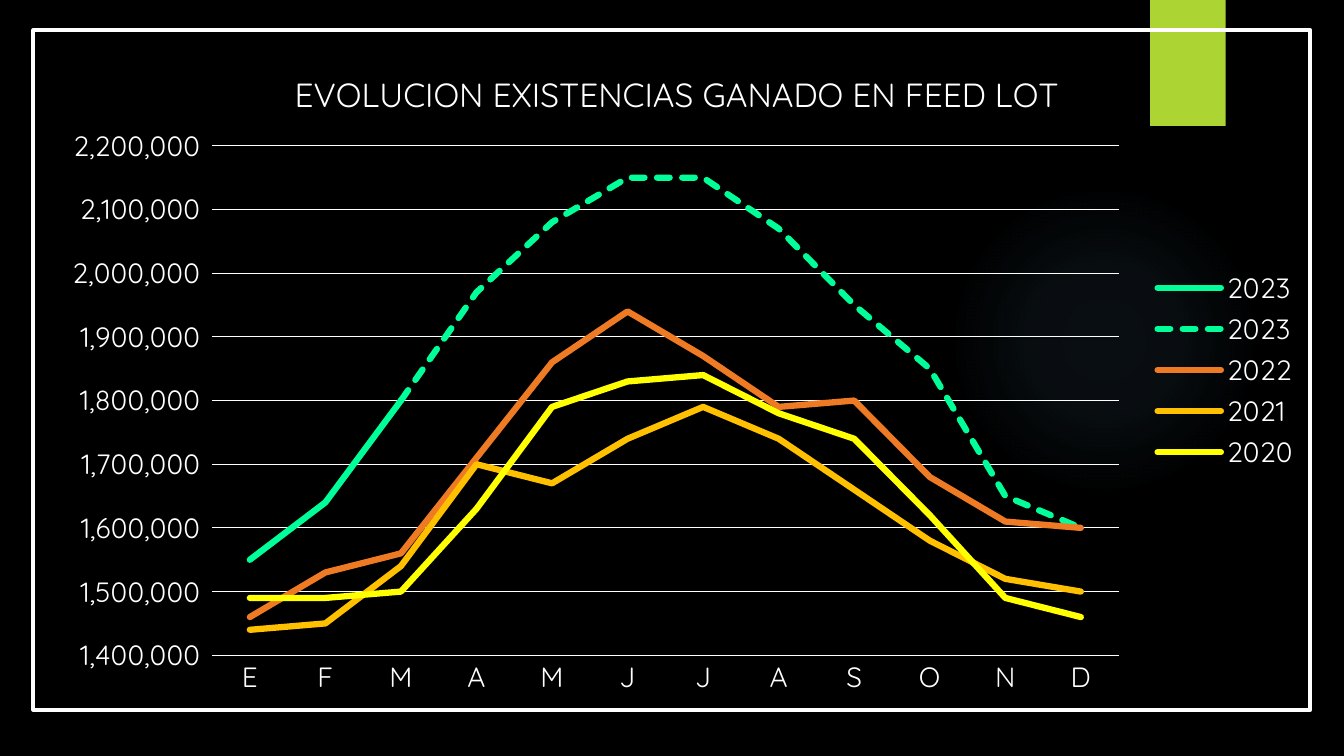
from dataclasses import dataclass

from lxml import etree
from pptx import Presentation
from pptx.chart.data import CategoryChartData
from pptx.dml.color import RGBColor
from pptx.enum.chart import XL_CHART_TYPE, XL_LEGEND_POSITION, XL_TICK_MARK
from pptx.enum.dml import MSO_LINE
from pptx.enum.shapes import MSO_SHAPE
from pptx.oxml import parse_xml
from pptx.oxml.ns import nsdecls, qn
from pptx.util import Pt

LINE_CHART = XL_CHART_TYPE.LINE
LEGEND_RIGHT = XL_LEGEND_POSITION.RIGHT
NO_TICK = XL_TICK_MARK.NONE
SYS_DASH = MSO_LINE.SQUARE_DOT
ELLIPSE, RECTANGLE = MSO_SHAPE.OVAL, MSO_SHAPE.RECTANGLE

FONT = "Quicksand"
COLORS = {
    "background": "000000", "text": "FFFFFF", "glow": "7AC4F0", "tab": "ACD433",
    "green": "00FF99", "orange": "EF7A24", "amber": "FFC000", "yellow": "FFFF00",
}
MONTHS = list("EFMAMJJASOND")
NUMBER_FORMAT = '_-* #,##0_-;\\-* #,##0_-;_-* "-"??_-;_-@_'


@dataclass
class Box:
    left: float
    top: float
    width: float
    height: float

    def lengths(self) -> tuple:
        return Pt(self.left), Pt(self.top), Pt(self.width), Pt(self.height)


@dataclass
class Year:
    name: str
    color: str
    thousands: list
    dashed: bool = False


YEARS = [
    Year("2023", "green", [1550, 1640, 1800] + [None] * 9),
    Year("2023", "green", [None] * 2 + [1800, 1970, 2080, 2150, 2150, 2070,
                                        1950, 1850, 1650, 1600], dashed=True),
    Year("2022", "orange", [1460, 1530, 1560, 1710, 1860, 1940,
                            1870, 1790, 1800, 1680, 1610, 1600]),
    Year("2021", "amber", [1440, 1450, 1540, 1700, 1670, 1740,
                           1790, 1740, 1660, 1580, 1520, 1500]),
    Year("2020", "yellow", [1490, 1490, 1500, 1630, 1790, 1830,
                            1840, 1780, 1740, 1620, 1490, 1460]),
]


def rgb(name: str) -> RGBColor:
    return RGBColor.from_string(COLORS[name])


def style_font(font, size: float) -> None:
    font.name, font.size, font.bold = FONT, Pt(size), False
    font.color.rgb = rgb("text")


def style_line(line, color: str, width: float) -> None:
    line.color.rgb = rgb(color)
    line.width = Pt(width)


def add_decoration(slide, kind, box: Box, color: str):
    shape = slide.shapes.add_shape(kind, *box.lengths())
    shape.shadow.inherit = False
    shape.fill.solid()
    shape.fill.fore_color.rgb = rgb(color)
    shape.line.fill.background()
    return shape


def add_glow(slide, box: Box) -> None:
    glow = add_decoration(slide, ELLIPSE, box, "glow")
    stops = "".join(
        f'<a:gs pos="{position * 1000}"><a:srgbClr val="{COLORS["glow"]}">'
        f'<a:alpha val="{alpha * 1000}"/></a:srgbClr></a:gs>'
        for position, alpha in ((0, 7), (36, 6), (69, 0)))
    gradient = parse_xml(
        f'<a:gradFill {nsdecls("a")} rotWithShape="1"><a:gsLst>{stops}</a:gsLst>'
        '<a:path path="circle"><a:fillToRect l="50000" t="50000" r="50000" b="50000"/>'
        '</a:path></a:gradFill>')
    properties = glow.element.spPr
    properties.replace(properties.find(qn("a:solidFill")), gradient)


def add_tab(slide, box: Box) -> None:
    tab = add_decoration(slide, RECTANGLE, box, "tab")
    effects = tab.element.spPr.find(qn("a:effectLst"))
    effects.append(parse_xml(
        f'<a:outerShdw {nsdecls("a")} blurRad="{Pt(3)}" dist="{Pt(2)}" dir="5400000" '
        'rotWithShape="0"><a:srgbClr val="000000"><a:alpha val="45000"/></a:srgbClr>'
        '</a:outerShdw>'))


def set_layout(part, index: int, **fractions: float) -> None:
    """Place a chart part by fractions of the chart area."""
    for old in part.findall(qn("c:layout")):
        part.remove(old)
    layout = etree.Element(qn("c:layout"))
    manual = etree.SubElement(layout, qn("c:manualLayout"))
    if "w" in fractions:
        etree.SubElement(manual, qn("c:layoutTarget"), val="inner")
    for side in ("xMode", "yMode"):
        etree.SubElement(manual, qn(f"c:{side}"), val="edge")
    for key, value in fractions.items():
        etree.SubElement(manual, qn(f"c:{key}"), val=str(value))
    part.insert(index, layout)


def add_stock_chart(slide, box: Box) -> None:
    data = CategoryChartData(number_format=NUMBER_FORMAT)
    data.categories = MONTHS
    for year in YEARS:
        data.add_series(year.name, [v and v * 1000 for v in year.thousands])
    chart = slide.shapes.add_chart(LINE_CHART, *box.lengths(), data).chart
    style_font(chart.font, 20)

    # Title
    chart.has_title = True
    heading = chart.chart_title.text_frame
    heading.text = "EVOLUCION EXISTENCIAS GANADO EN FEED LOT"
    style_font(heading.paragraphs[0].font, 24)

    # Legend
    chart.has_legend = True
    chart.legend.position = LEGEND_RIGHT
    chart.legend.include_in_layout = False
    style_font(chart.legend.font, 20)

    # Axes
    months, heads = chart.category_axis, chart.value_axis
    for axis in (months, heads):
        axis.major_tick_mark = axis.minor_tick_mark = NO_TICK
        style_font(axis.tick_labels.font, 20)
    style_line(months.format.line, "text", 0.75)
    heads.format.line.fill.background()
    heads.minimum_scale, heads.maximum_scale = 1_400_000, 2_200_000
    heads.major_unit = 100_000
    heads.tick_labels.number_format = NUMBER_FORMAT
    heads.tick_labels.number_format_is_linked = False
    style_line(heads.major_gridlines.format.line, "text", 0.75)

    # Series lines with round ends
    chart.plots[0].vary_by_categories = False
    for year, series in zip(YEARS, chart.plots[0].series):
        series.smooth = False
        style_line(series.format.line, year.color, 4.5)
        if year.dashed:
            series.format.line.dash_style = SYS_DASH
    for outline in chart.element.xpath(".//c:ser/c:spPr/a:ln"):
        outline.set("cap", "rnd")
        etree.SubElement(outline, qn("a:round"))

    # Frame and placement
    body = chart.element.find(qn("c:chart"))
    body.addnext(parse_xml(
        f'<c:spPr {nsdecls("c", "a")}><a:noFill/><a:ln w="{Pt(3)}"><a:solidFill>'
        f'<a:srgbClr val="{COLORS["text"]}"/></a:solidFill></a:ln></c:spPr>'))
    set_layout(body.find(qn("c:title")), 1, x=0.2, y=0.05)
    set_layout(body.find(qn("c:plotArea")), 0, x=0.14, y=0.17, w=0.71, h=0.75)


def main() -> None:
    deck = Presentation()
    deck.slide_width, deck.slide_height = Pt(960), Pt(540)
    slide = deck.slides.add_slide(deck.slide_layouts[6])
    slide.background.fill.solid()
    slide.background.fill.fore_color.rgb = rgb("background")
    add_glow(slide, Box(677.5, 131.8, 221.8, 221.8))
    add_tab(slide, Box(821.5, 0, 54, 90))
    add_stock_chart(slide, Box(22.3, 20.2, 915.1, 488.2))
    deck.save("out.pptx")


if __name__ == "__main__":
    main()
